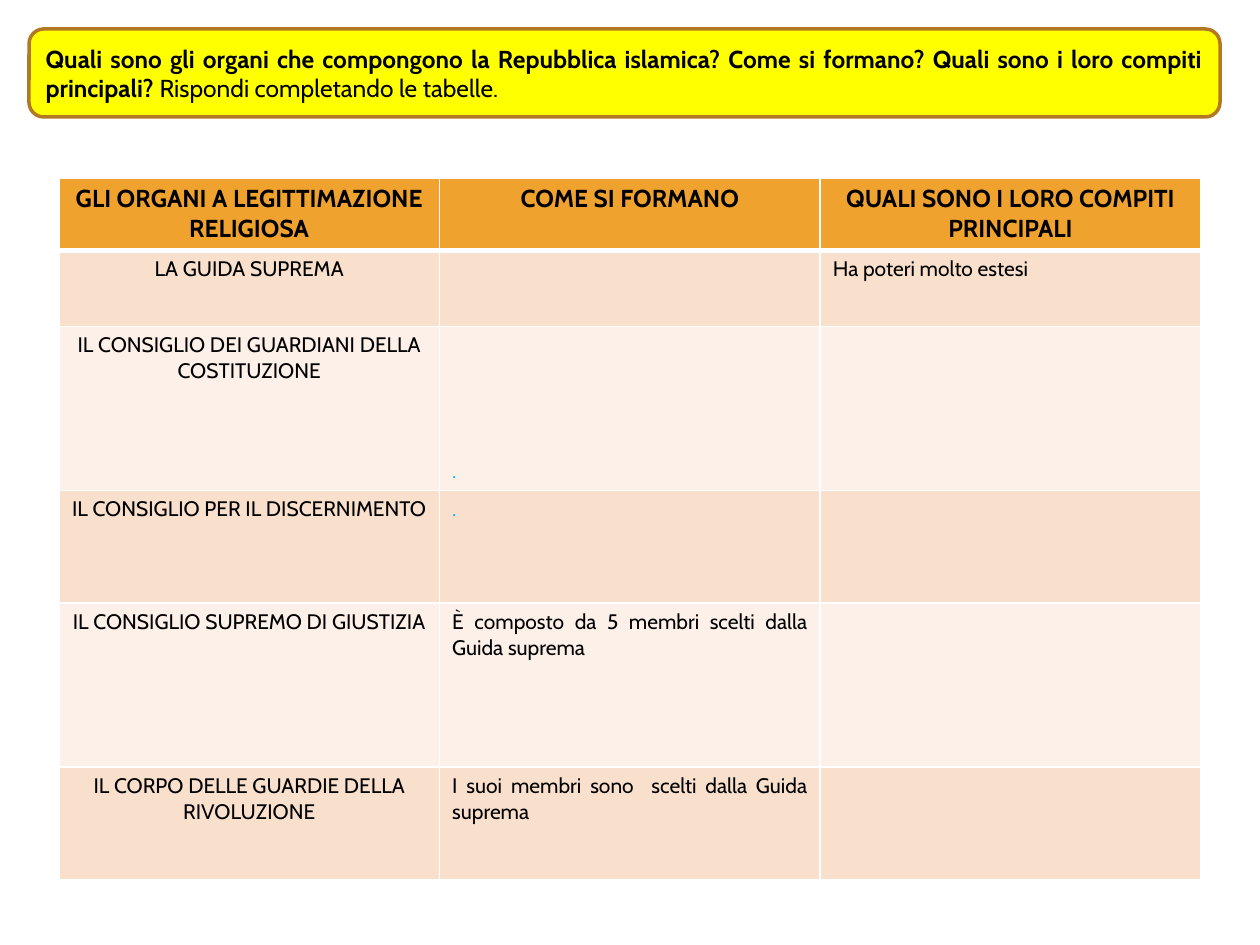
from dataclasses import dataclass

from lxml import etree
from pptx import Presentation
from pptx import util as u
from pptx.dml import color
from pptx.enum import shapes, text
from pptx.oxml import ns

EMU_PER_PX = 914400 / 126
FONT = "Cabin"
COLORS = {
    "black": "000000", "white": "FFFFFF", "dot": "00B0F0",
    "banner": "FFFF00", "banner_line": "B27822",
    "header": "F0A22E", "dark_band": "F9E0CD", "light_band": "FCF0E8",
}
CENTER, JUSTIFY = text.PP_ALIGN.CENTER, text.PP_ALIGN.JUSTIFY
TOP, BOTTOM = text.MSO_ANCHOR.TOP, text.MSO_ANCHOR.BOTTOM


@dataclass(frozen=True)
class Entry:
    words: str = ""
    color: str = "black"
    anchor: text.MSO_ANCHOR = TOP


@dataclass(frozen=True)
class Row:
    height: int
    entries: tuple[Entry, Entry, Entry]


BANNER = (
    ("Quali sono gli organi che compongono la Repubblica islamica? Come si formano? "
     "Quali sono i loro compiti principali? ", True),
    ("Rispondi completando le tabelle.", False),
)
ROWS = (
    Row(71, (Entry("GLI ORGANI A LEGITTIMAZIONE RELIGIOSA"), Entry("COME SI FORMANO"),
             Entry("QUALI SONO I LORO COMPITI PRINCIPALI"))),
    Row(76, (Entry("LA GUIDA SUPREMA"), Entry(), Entry("Ha poteri molto estesi"))),
    Row(164, (Entry("IL CONSIGLIO DEI GUARDIANI DELLA COSTITUZIONE"),
              Entry(".", "dot", BOTTOM), Entry())),
    Row(113, (Entry("IL CONSIGLIO PER IL DISCERNIMENTO"), Entry(".", "dot"), Entry())),
    Row(164, (Entry("IL CONSIGLIO SUPREMO DI GIUSTIZIA"),
              Entry("È composto da 5 membri scelti dalla Guida suprema"), Entry())),
    Row(113, (Entry("IL CORPO DELLE GUARDIE DELLA RIVOLUZIONE"),
              Entry("I suoi membri sono  scelti dalla Guida suprema"), Entry())),
)


def px(length: int) -> u.Emu:
    return u.Emu(round(length * EMU_PER_PX))


def rgb(name: str) -> color.RGBColor:
    return color.RGBColor.from_string(COLORS[name])


def add_span(para, words: str, size: int, bold: bool, ink: str = "black") -> None:
    span = para.add_run()
    span.text = words
    for key, value in {"name": FONT, "size": u.Pt(size), "bold": bold}.items():
        setattr(span.font, key, value)
    span.font.color.rgb = rgb(ink)


def set_borders(cell, bottom: int, top: int) -> None:
    """Give the cell white borders; widths are in points."""
    properties = cell._tc.get_or_add_tcPr()
    for side, width in {"L": 1, "R": 1, "T": top, "B": bottom}.items():
        line = etree.SubElement(properties, ns.qn(f"a:ln{side}"), w=str(u.Pt(width)))
        fill = etree.SubElement(line, ns.qn("a:solidFill"))
        etree.SubElement(fill, ns.qn("a:srgbClr"), val=COLORS["white"])


def add_banner(page) -> None:
    box = page.shapes.add_shape(
        shapes.MSO_SHAPE.ROUNDED_RECTANGLE, px(29), px(29), px(1191), px(88))
    box.shadow.inherit = False
    box.fill.solid()
    box.fill.fore_color.rgb = rgb("banner")
    box.line.color.rgb = rgb("banner_line")
    box.line.width = u.Pt(2)
    frame = box.text_frame
    for key, value in {"word_wrap": True, "vertical_anchor": text.MSO_ANCHOR.MIDDLE}.items():
        setattr(frame, key, value)
    para = frame.paragraphs[0]
    para.alignment = JUSTIFY
    for words, bold in BANNER:
        add_span(para, words, 14, bold)


def fill_cell(cell, entry: Entry, row: int, column: int) -> None:
    is_header = row == 0
    set_borders(cell, bottom=3 if is_header else 1, top=3 if row == 1 else 1)
    band = "header" if is_header else ("light_band", "dark_band")[row % 2]
    cell.fill.solid()
    cell.fill.fore_color.rgb = rgb(band)
    cell.vertical_anchor = entry.anchor
    para = cell.text_frame.paragraphs[0]
    para.alignment = CENTER if is_header or column == 0 else JUSTIFY
    if entry.words:
        add_span(para, entry.words, 14 if is_header else 12, is_header, entry.color)


def add_organs_table(page) -> None:
    height = sum(row.height for row in ROWS)
    table = page.shapes.add_table(
        len(ROWS), 3, px(59), px(178), px(1142), px(height)).table
    for row_index, row in enumerate(ROWS):
        table.rows[row_index].height = px(row.height)
        for column, entry in enumerate(row.entries):
            fill_cell(table.cell(row_index, column), entry, row_index, column)


def main() -> None:
    deck = Presentation()
    deck.slide_width, deck.slide_height = px(1260), px(945)
    page = deck.slides.add_slide(deck.slide_layouts[6])
    add_banner(page)
    add_organs_table(page)
    deck.save("out.pptx")


if __name__ == "__main__":
    main()
